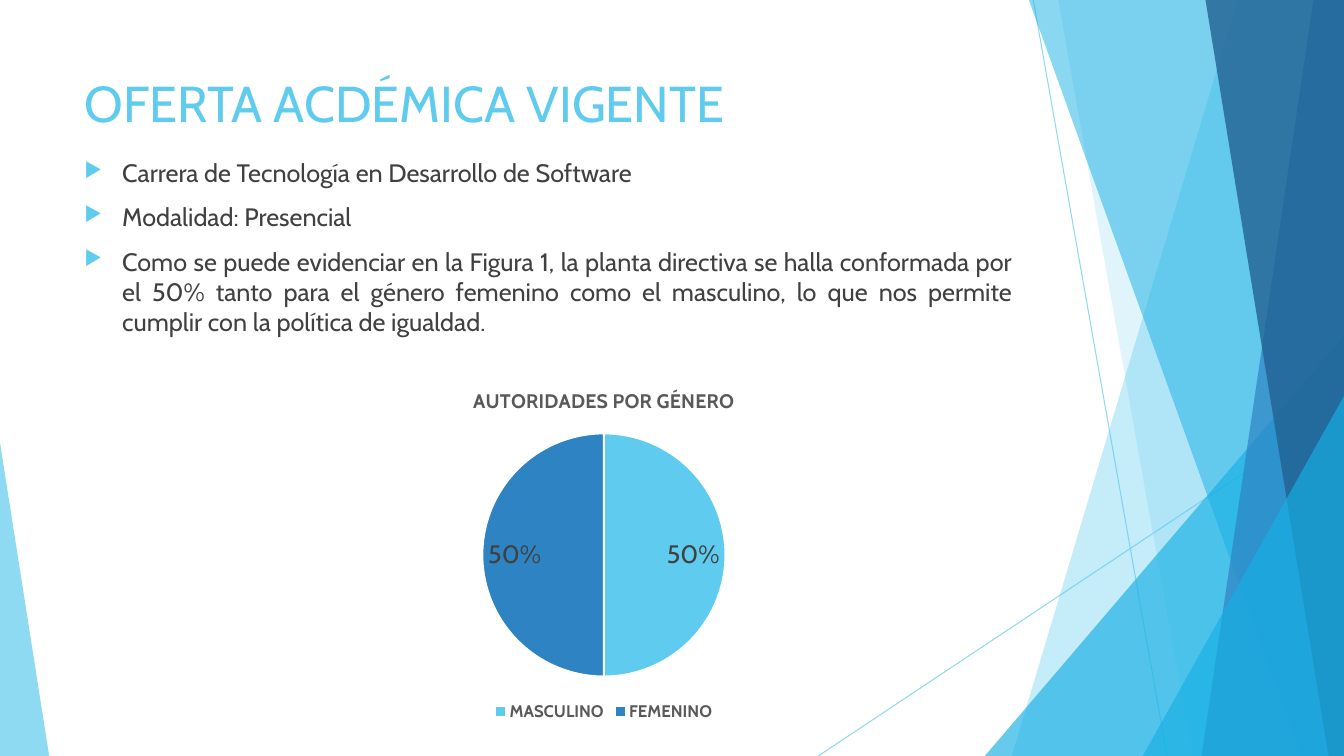
from lxml import etree
from pptx import Presentation
from pptx.chart.data import CategoryChartData
from pptx.dml.color import RGBColor
from pptx.enum.chart import XL_CHART_TYPE as ChartType
from pptx.enum.chart import XL_LABEL_POSITION as LabelPosition
from pptx.enum.chart import XL_LEGEND_POSITION as LegendPosition
from pptx.enum.shapes import MSO_CONNECTOR as Connector
from pptx.enum.shapes import MSO_SHAPE as Shape
from pptx.enum.text import PP_ALIGN as Align
from pptx.oxml.ns import qn
from pptx.util import Cm, Pt

COLORS = {
    "sky": "5FCBEF",
    "cyan": "17B0E4",
    "blue": "2E83C3",
    "navy": "226292",
    "text": "404040",
    "gray": "595959",
    "white": "FFFFFF",
}
FONT = "Cabin"
WIDTH, HEIGHT = 33.87, 19.05
ITEMS = [
    ("Carrera de Tecnología en Desarrollo de Software", Align.LEFT),
    ("Modalidad: Presencial", Align.LEFT),
    ("Como se puede evidenciar en la Figura 1, la planta directiva se halla "
     "conformada por el 50% tanto para el género femenino como el masculino, "
     "lo que nos permite cumplir con la política de igualdad.", Align.JUSTIFY),
]


def rgb(name):
    """Return the named colour."""
    return RGBColor.from_string(COLORS[name])


def add_child(parent, tag, **attributes):
    """Append an XML element with the given attributes."""
    child = etree.SubElement(parent, qn(tag))
    for key, value in attributes.items():
        child.set(key, str(value))
    return child


def set_opacity(shape, percent):
    """Make the colours of a shape partly transparent."""
    for color in shape.element.iter(qn("a:srgbClr")):
        add_child(color, "a:alpha", val=percent * 1000)


def paint(shape, color, opacity):
    """Give a shape a translucent fill without line or shadow."""
    shape.shadow.inherit = False
    shape.fill.solid()
    shape.fill.fore_color.rgb = rgb(color)
    shape.line.fill.background()
    set_opacity(shape, opacity)


def add_band(page, top_x, bottom_x, color, opacity):
    """Fill the page from a slanted edge to its right side."""
    builder = page.shapes.build_freeform(Cm(top_x), 0, scale=1.0)
    corners = [(WIDTH, 0), (WIDTH, HEIGHT), (bottom_x, HEIGHT)]
    builder.add_line_segments([(Cm(x), Cm(y)) for x, y in corners], close=True)
    paint(builder.convert_to_shape(), color, opacity)


def add_corner(page, left, width, height, apex, color, opacity):
    """Add a right triangle standing on the bottom of the page."""
    corner = page.shapes.add_shape(
        Shape.ISOSCELES_TRIANGLE, Cm(left), Cm(HEIGHT - height), Cm(width), Cm(height))
    corner.adjustments[0] = apex
    paint(corner, color, opacity)


def add_ray(page, x1, y1, x2, y2):
    """Add a thin translucent line."""
    ray = page.shapes.add_connector(Connector.STRAIGHT, Cm(x1), Cm(y1), Cm(x2), Cm(y2))
    ray.line.color.rgb = rgb("sky")
    ray.line.width = Pt(0.75)
    set_opacity(ray, 70)
    add_child(ray.element.spPr, "a:effectLst")


def add_backdrop(page):
    """Draw the facets at both sides of the page."""
    add_ray(page, 26.04, 0, 29.41, HEIGHT)
    add_ray(page, WIDTH, 10.24, 20.62, HEIGHT)
    add_band(page, 31.19, 25.5, "sky", 36)
    add_band(page, 26.67, 30.05, "sky", 20)
    add_corner(page, 24.82, 9.05, 10.59, 1, "cyan", 66)
    add_band(page, 25.93, 32.79, "cyan", 50)
    add_band(page, 33.1, 30.28, "blue", 70)
    add_band(page, 30.38, 33.48, "navy", 80)
    add_corner(page, 28.8, 5.07, 9.07, 1, "cyan", 66)
    add_corner(page, 0, 1.24, 7.9, 0, "sky", 70)


def style_font(font, size, color, bold=False):
    """Set the face, size, colour and weight of a font."""
    font.name = FONT
    font.size = Pt(size)
    font.bold = bold
    font.color.rgb = rgb(color)


def add_span(para, text, size, color, bold=False):
    """Add a styled run to a paragraph."""
    span = para.add_run()
    span.text = text
    style_font(span.font, size, color, bold)


def add_text_frame(page, left, top, width, height):
    """Add a wrapping text box and return its frame."""
    box = page.shapes.add_textbox(Cm(left), Cm(top), Cm(width), Cm(height))
    box.text_frame.word_wrap = True
    return box.text_frame


def add_bullet(para):
    """Give a paragraph a hanging arrow bullet."""
    props = para._p.get_or_add_pPr()
    props.set("marL", str(Cm(0.95)))
    props.set("indent", str(Cm(-0.95)))
    add_child(add_child(props, "a:buClr"), "a:srgbClr", val=COLORS["sky"])
    add_child(props, "a:buSzPct", val=80000)
    add_child(props, "a:buChar", char="▶")


def add_list(page, items):
    """Add the bulleted list."""
    frame = add_text_frame(page, 1.88, 3.84, 23.88, 10.77)
    for index, (text, align) in enumerate(items):
        para = frame.add_paragraph() if index else frame.paragraphs[0]
        add_bullet(para)
        para.alignment = align
        para.space_before = Pt(10 if index else 0)
        add_span(para, text, 18, "text")


def add_gender_pie(page):
    """Add the pie chart of authorities by gender."""
    data = CategoryChartData(number_format="0%")
    data.categories = ["MASCULINO", "FEMENINO"]
    data.add_series("Series 1", [0.5, 0.5])
    chart = page.shapes.add_chart(
        ChartType.PIE, Cm(7.75), Cm(9.35), Cm(14.94), Cm(8.94), data).chart
    style_font(chart.font, 10, "text")
    chart.has_title = True
    add_span(chart.chart_title.text_frame.paragraphs[0],
             "AUTORIDADES POR GÉNERO", 14, "gray", True)
    chart.has_legend = True
    chart.legend.position = LegendPosition.BOTTOM
    chart.legend.include_in_layout = False
    style_font(chart.legend.font, 12, "gray", True)

    plot = chart.plots[0]
    plot.vary_by_categories = True
    for index, color in enumerate(["sky", "blue"]):
        slice_format = plot.series[0].points[index].format
        slice_format.fill.solid()
        slice_format.fill.fore_color.rgb = rgb(color)
        slice_format.line.color.rgb = rgb("white")
        slice_format.line.width = Pt(1.5)
    plot.has_data_labels = True
    labels = plot.data_labels
    labels.show_value = True
    labels.show_percentage = False
    labels.number_format = "0%"
    labels.number_format_is_linked = False
    labels.position = LabelPosition.INSIDE_END
    style_font(labels.font, 18, "text")


def main():
    """Build and save the slide."""
    deck = Presentation()
    deck.slide_width, deck.slide_height = Cm(WIDTH), Cm(HEIGHT)
    page = deck.slides.add_slide(deck.slide_layouts[6])
    add_backdrop(page)
    title = add_text_frame(page, 1.88, 1.7, 23.88, 1.88)
    add_span(title.paragraphs[0], "OFERTA ACDÉMICA VIGENTE", 36, "sky")
    add_list(page, ITEMS)
    add_gender_pie(page)
    deck.save("out.pptx")


if __name__ == "__main__":
    main()
